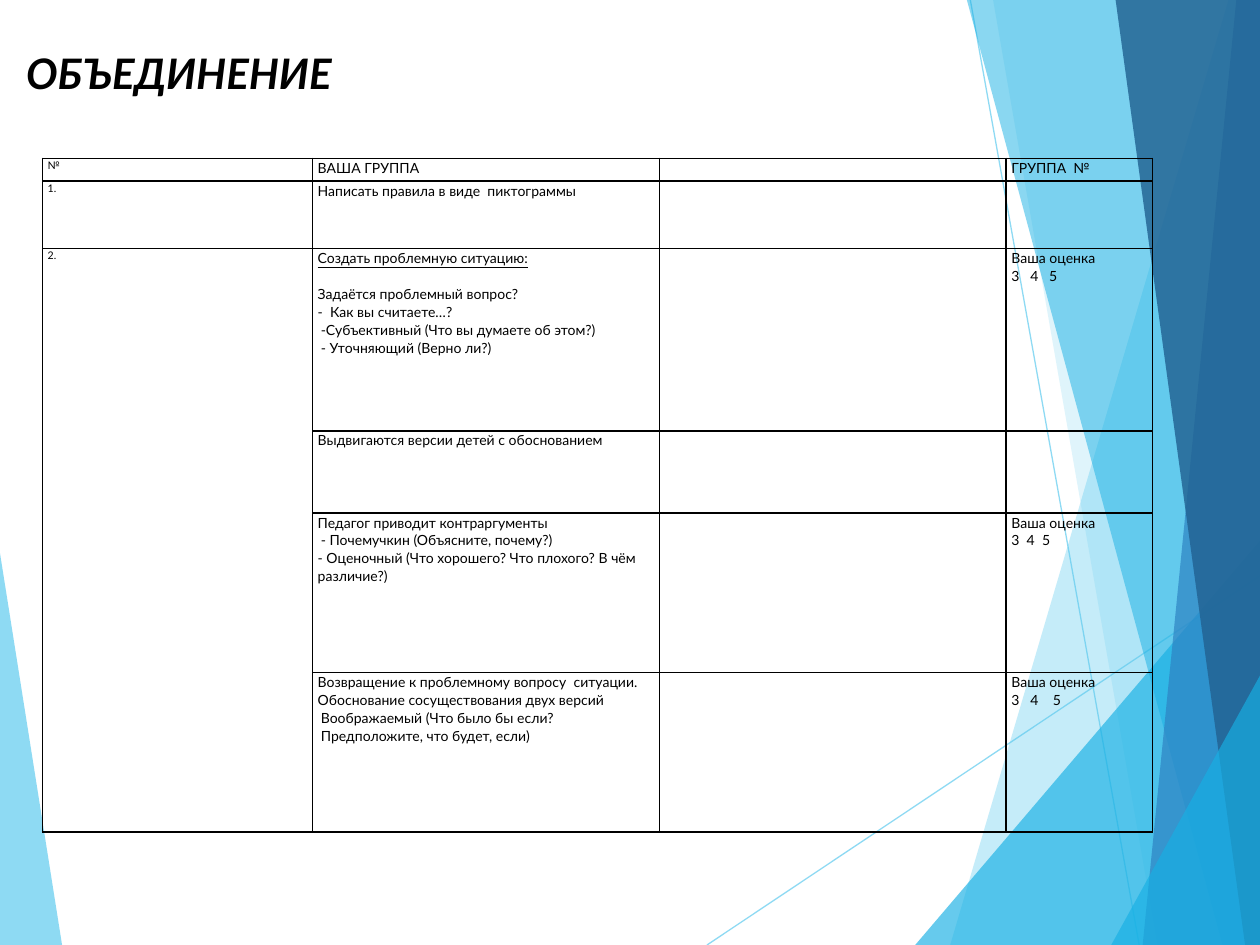
from lxml.etree import SubElement
from pptx import Presentation
from pptx.dml.color import RGBColor
from pptx.enum.shapes import MSO_CONNECTOR
from pptx.enum.text import MSO_AUTO_SIZE, PP_ALIGN
from pptx.oxml.ns import qn
from pptx.util import Pt

BLACK = RGBColor(0x00, 0x00, 0x00)
SKY = RGBColor(0x5F, 0xCB, 0xEF)
CYAN = RGBColor(0x17, 0xB0, 0xE4)
BLUE = RGBColor(0x2E, 0x83, 0xC3)
NAVY = RGBColor(0x22, 0x62, 0x92)
FONT = "Lato"
W, H = 720, 540

LEFT_FACET = (SKY, 70, [(0, 316), (35.5, H), (0, H)])
RAYS = [((404, H), (W, 329)), ((554.5, 0), (651, H))]
RIGHT_FACETS = [
    (SKY, 36, [(702, 0), (543, H), (W, H), (W, 0)]),
    (SKY, 20, [(567.5, 0), (661.5, H), (W, H), (W, 0)]),
    (CYAN, 66, [(523, H), (W, 309), (W, H)]),
    (CYAN, 50, [(552.5, 0), (698.5, H), (W, H), (W, 0)]),
    (BLUE, 70, [(706.5, 0), (653, H), (W, H), (W, 0)]),
    (NAVY, 82, [(637.5, 0), (711.5, H), (W, H), (W, 0)]),
    (CYAN, 66, [(635, H), (W, 386), (W, H)]),
]

TITLE = "ОБЪЕДИНЕНИЕ"
COLUMNS = [154.3, 198.2, 198.2, 83.6]
ROW_HEIGHTS = [13, 38.5, 104.2, 47, 91.2, 91.2]
GRADE = "Ваша оценка"
ROWS = [
    (["№"], ["ВАША ГРУППА"], [], ["ГРУППА  №"]),
    (["1."], ["Написать правила в виде  пиктограммы"], [], []),
    (["2."],
     ["Создать проблемную ситуацию:",
      "Задаётся проблемный вопрос?",
      "-  Как вы считаете…?",
      "-Субъективный (Что вы думаете об этом?)",
      "- Уточняющий (Верно ли?)"],
     [], [GRADE, "3   4   5"]),
    ([], ["Выдвигаются версии детей с обоснованием"], [], []),
    ([],
     ["Педагог приводит контраргументы",
      "- Почемучкин (Объясните, почему?)",
      "- Оценочный (Что хорошего? Что плохого? В чём различие?)"],
     [], [GRADE, "3  4  5"]),
    ([],
     ["Возвращение к проблемному вопросу  ситуации.",
      "Обоснование сосуществования двух версий",
      "Воображаемый (Что было бы если? Предположите, что будет, если)"],
     [], [GRADE, "3   4    5"]),
]
UNDERLINED = "Создать проблемную ситуацию:"
AFTER_GAP = "Задаётся проблемный вопрос?"
INDENTED = ("-Субъективный", "- Уточняющий", "- Почемучкин", "Воображаемый")


def set_alpha(fill, percent):
    color = fill._xPr.find(qn("a:solidFill"))[0]
    SubElement(color, qn("a:alpha"), val=str(percent * 1000))


def add_facet(shapes, color, alpha, points):
    start, *rest = [(Pt(x), Pt(y)) for x, y in points]
    builder = shapes.build_freeform(*start)
    builder.add_line_segments(rest)
    sp = builder.convert_to_shape()
    sp.shadow.inherit = False
    sp.fill.solid()
    sp.fill.fore_color.rgb = color
    set_alpha(sp.fill, alpha)
    sp.line.fill.background()


def add_ray(shapes, start, end):
    ends = [Pt(v) for v in start + end]
    ray = shapes.add_connector(MSO_CONNECTOR.STRAIGHT, *ends)
    ray.line.width = Pt(0.75)
    ray.line.color.rgb = SKY
    set_alpha(ray.line.fill, 70)
    SubElement(ray._element.spPr, qn("a:effectLst"))


def add_run(p, text, size):
    r = p.add_run()
    r.text = text
    r.font.size = Pt(size)
    r.font.name = FONT
    r.font.color.rgb = BLACK
    return r


def add_borders(cell):
    tcPr = cell._tc.get_or_add_tcPr()
    for side in ("lnL", "lnR", "lnT", "lnB"):
        ln = SubElement(tcPr, qn(f"a:{side}"), w=str(Pt(1)))
        fill = SubElement(ln, qn("a:solidFill"))
        SubElement(fill, qn("a:srgbClr"), val=str(BLACK))


def fill_cell(cell, lines, size):
    cell.margin_left = cell.margin_right = Pt(3)
    cell.margin_top = cell.margin_bottom = 0
    add_borders(cell)
    cell.fill.background()
    tf = cell.text_frame
    if not lines:
        SubElement(tf.paragraphs[0]._p, qn("a:endParaRPr"), sz=str(size * 100))
    for i, line in enumerate(lines):
        p = tf.add_paragraph() if i else tf.paragraphs[0]
        p.line_spacing = 1.07
        if line == AFTER_GAP:
            p.space_before = Pt(10.3)
        if line.startswith(INDENTED):
            p._p.get_or_add_pPr().set("marL", str(Pt(1.75)))
        r = add_run(p, line, size)
        if line == UNDERLINED:
            r.font.underline = True


def add_title(shapes):
    sp = shapes.add_textbox(Pt(6.5), Pt(23.8), Pt(191.5), Pt(36))
    tf = sp.text_frame
    tf.word_wrap = False
    tf.auto_size = MSO_AUTO_SIZE.SHAPE_TO_FIT_TEXT
    p = tf.paragraphs[0]
    p.alignment = PP_ALIGN.CENTER
    r = add_run(p, TITLE, 24)
    r.font.bold = r.font.italic = True


def add_worksheet(shapes):
    table = shapes.add_table(len(ROWS), len(COLUMNS), Pt(24.3), Pt(90.5),
                             Pt(sum(COLUMNS)), Pt(sum(ROW_HEIGHTS))).table
    table.first_row = table.horz_banding = False
    for column, width in zip(table.columns, COLUMNS):
        column.width = Pt(width)
    for row, height, contents in zip(table.rows, ROW_HEIGHTS, ROWS):
        row.height = Pt(height)
        for c, lines in enumerate(contents):
            fill_cell(row.cells[c], lines, 8 if c else 6)
    table.cell(2, 0).merge(table.cell(len(ROWS) - 1, 0))


def main():
    prs = Presentation()
    prs.slide_width, prs.slide_height = Pt(W), Pt(H)
    shapes = prs.slides.add_slide(prs.slide_layouts[6]).shapes
    add_facet(shapes, *LEFT_FACET)
    for ray in RAYS:
        add_ray(shapes, *ray)
    for facet in RIGHT_FACETS:
        add_facet(shapes, *facet)
    add_title(shapes)
    add_worksheet(shapes)
    prs.save("out.pptx")


if __name__ == "__main__":
    main()
